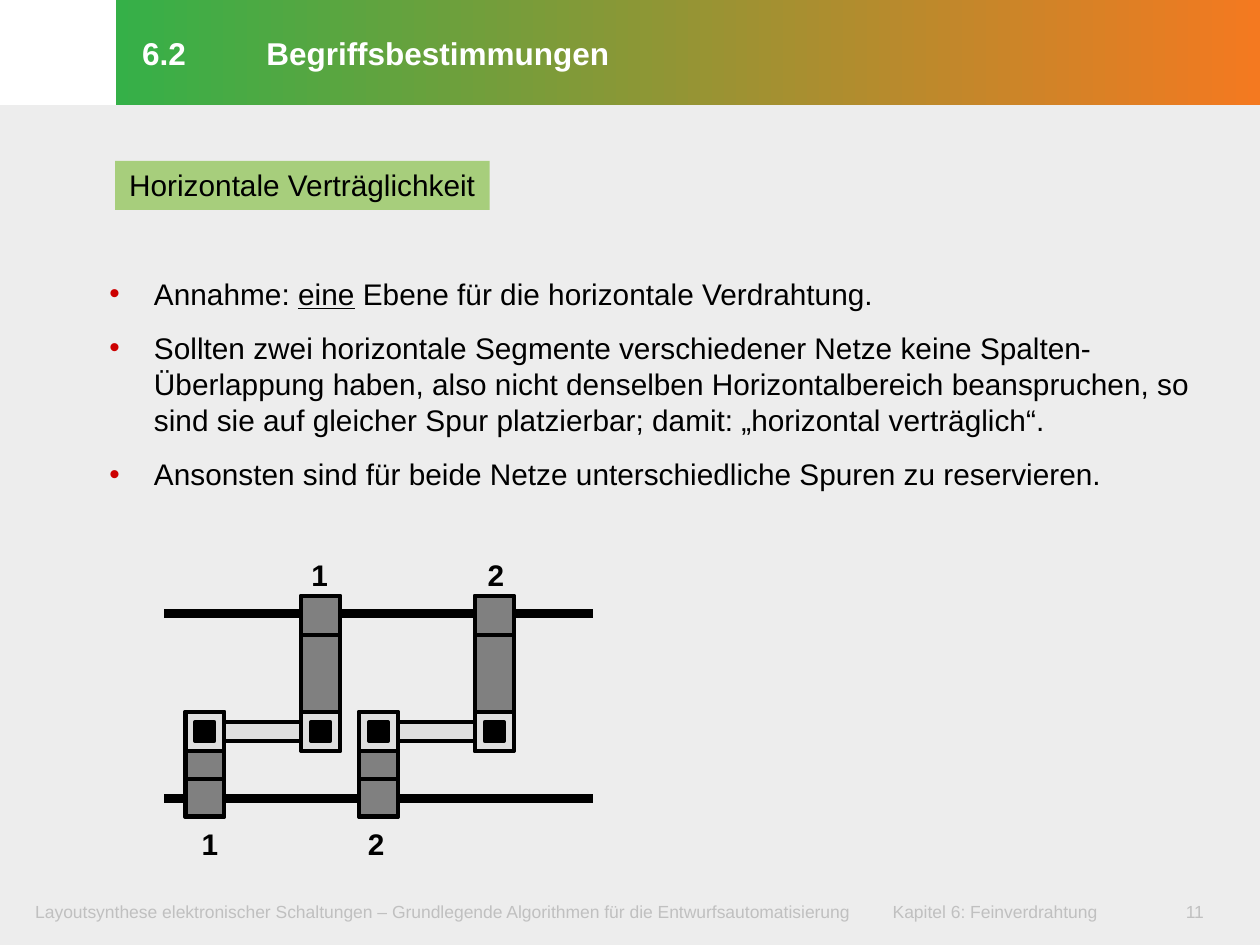
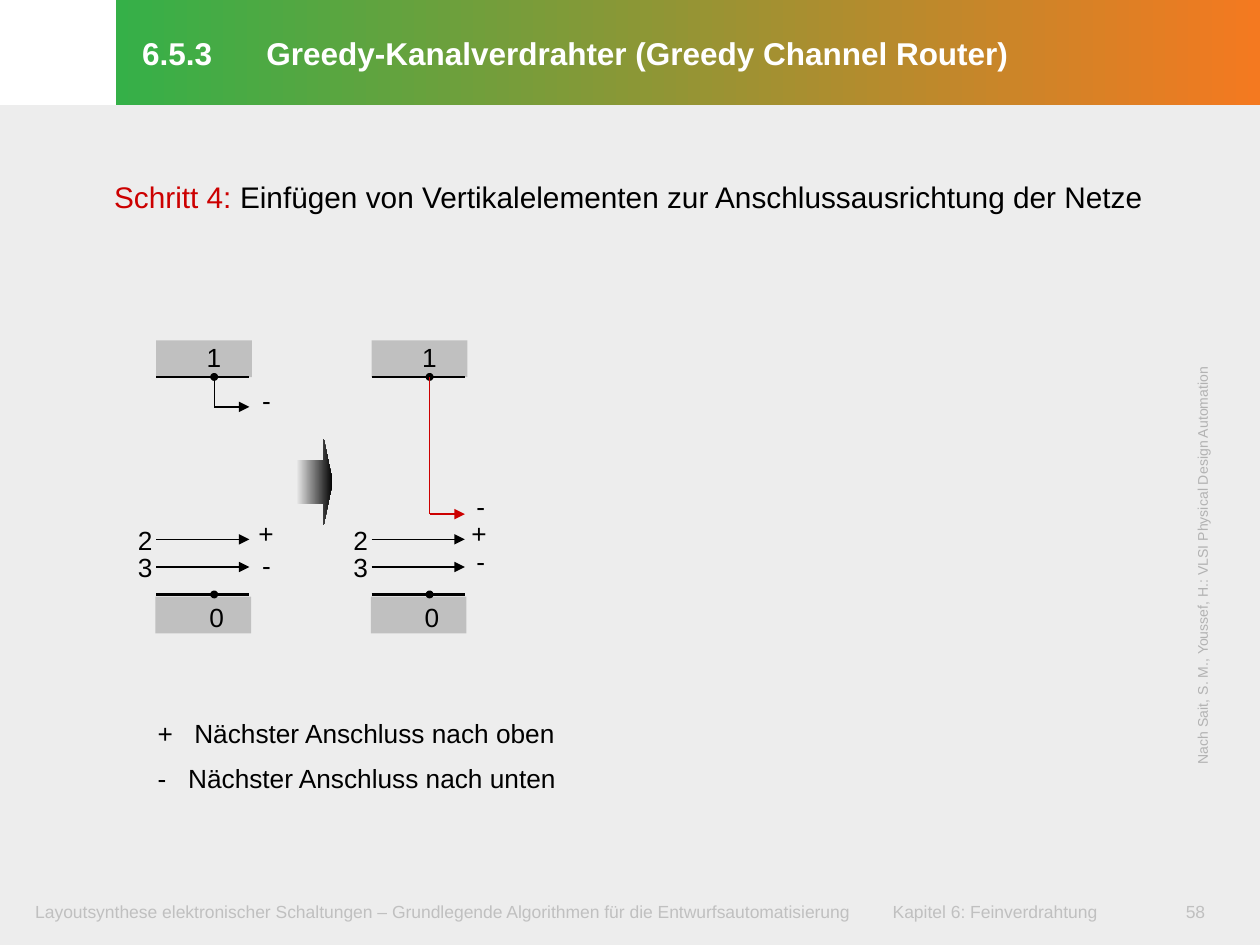
"""Build two slides on detailed routing: horizontal compatibility and the greedy channel router."""

from dataclasses import dataclass

import lxml.etree
import pptx
import pptx.dml.color
import pptx.enum.shapes
import pptx.enum.text
import pptx.oxml.ns
import pptx.presentation
import pptx.shapes.autoshape
import pptx.slide
import pptx.text.text
import pptx.util

Pt = pptx.util.Pt
RGBColor = pptx.dml.color.RGBColor
SHAPE = pptx.enum.shapes.MSO_SHAPE
qn = pptx.oxml.ns.qn

FONT = "Arial"
BLACK = RGBColor(0x00, 0x00, 0x00)
WHITE = RGBColor(0xFF, 0xFF, 0xFF)
RED = RGBColor(0xCC, 0x00, 0x00)
GREEN = RGBColor(0x35, 0xB0, 0x48)
ORANGE = RGBColor(0xF4, 0x79, 0x20)
LIGHT_GREEN = RGBColor(0xA7, 0xCE, 0x7C)
PANEL = RGBColor(0xED, 0xED, 0xED)
SILVER = RGBColor(0xC0, 0xC0, 0xC0)
CITATION = RGBColor(0xB2, 0xB2, 0xB2)
COLUMN_GRAY = RGBColor(0x80, 0x80, 0x80)
TRACK_GRAY = RGBColor(0xDF, 0xDF, 0xDF)
ARROW_GRAY = RGBColor(0xEA, 0xEA, 0xEA)

FOOTER = (
    "Layoutsynthese elektronischer Schaltungen – Grundlegende Algorithmen "
    "für die Entwurfsautomatisierung\tKapitel 6: Feinverdrahtung"
)
BULLETS = [
    ["Annahme: ", "eine", " Ebene für die horizontale Verdrahtung."],
    [
        "Sollten zwei horizontale Segmente verschiedener Netze keine Spalten-Überlappung haben, "
        "also nicht denselben Horizontalbereich beanspruchen, so sind sie auf gleicher Spur "
        "platzierbar; damit: „horizontal verträglich“."
    ],
    ["Ansonsten sind für beide Netze unterschiedliche Spuren zu reservieren."],
]


@dataclass(frozen=True)
class Box:
    """Place and size of a shape in points."""

    left: float
    top: float
    width: float
    height: float


@dataclass(frozen=True)
class Style:
    """Look of a text box: size, colour and inner margins in points."""

    size: float
    color: RGBColor = BLACK
    bold: bool = False
    left: float = 8
    top: float = 3.6
    bottom: float = 3.6
    spacing: float | None = None


@dataclass(frozen=True)
class Net:
    """One routed net with the places of its two pin labels."""

    label: str
    left: float
    top_label: float
    bottom_label: float


@dataclass(frozen=True)
class Stage:
    """State of the channel, with the depth of the bend and the place of the signs."""

    left: float
    bend: float
    color: RGBColor
    signs: tuple[tuple[str, float, float], ...]


TITLE = Style(18, WHITE, bold=True, left=15, bottom=5, spacing=23.5)
FOOTNOTE = Style(10, SILVER, left=8.6, top=4.3)
TAG = Style(17)
STEP = Style(17, left=15, bottom=5, spacing=23.5)
PIN_LABEL = Style(17, bold=True)
LABEL = Style(15)
SOURCE = Style(8, CITATION, left=7.2)

NETS = [Net("1", 105.9, 170, 107.3), Net("2", 205.2, 270.7, 202.3)]
COLUMN_STEP = 66.2
PIN = 22.2
TOP_PIN, VIA, BOTTOM_PIN = 340.6, 406.9, 445
BOTTOM_END = 466.6
CORE = 10.8
CORE_INSET = (PIN - CORE) / 2
RAILS = (350.7, 456.2)

TOP_EDGE, BOTTOM_EDGE = 215.4, 339.7
TRACKS = {"2": 308.2, "3": 324}
TRACK_LENGTH = 53.2
PIN_OFFSET = 33.1
STAGES = [
    Stage(89.3, 232.5, BLACK, (("-", 52.5, 216), ("+", 50.4, 292.3), ("-", 52.5, 310.3))),
    Stage(212.4, 293.8, RED, (("-", 51.8, 276.5), ("+", 49, 292.3), ("-", 51.8, 308.2))),
]


def add_box(
    slide: pptx.slide.Slide,
    box: Box,
    fill: RGBColor | tuple[RGBColor, RGBColor] | None,
    kind: SHAPE = SHAPE.RECTANGLE,
    line: float = 0,
) -> pptx.shapes.autoshape.Shape:
    """Draw a preset shape with a plain or two-colour fill and an optional black line."""
    shape = slide.shapes.add_shape(kind, Pt(box.left), Pt(box.top), Pt(box.width), Pt(box.height))
    shape.shadow.inherit = False
    if fill is None:
        shape.fill.background()
    elif isinstance(fill, RGBColor):
        shape.fill.solid()
        shape.fill.fore_color.rgb = fill
    else:
        shape.fill.gradient()
        shape.fill.gradient_angle = 0
        for stop, color in zip(shape.fill.gradient_stops, fill):
            stop.color.rgb = color
    if line:
        shape.line.color.rgb = BLACK
        shape.line.width = Pt(line)
    else:
        shape.line.fill.background()
    return shape


def add_tab(paragraph: pptx.text.text._Paragraph, position: float) -> None:
    """Set one left tab stop."""
    tabs = lxml.etree.SubElement(paragraph._p.get_or_add_pPr(), qn("a:tabLst"))
    lxml.etree.SubElement(tabs, qn("a:tab"), pos=str(Pt(position)), algn="l")


def add_bullet(paragraph: pptx.text.text._Paragraph, indent: float) -> None:
    """Give a paragraph a red bullet and a hanging indent."""
    properties = paragraph._p.get_or_add_pPr()
    properties.set("marL", str(Pt(indent)))
    properties.set("indent", str(-Pt(indent)))
    color = lxml.etree.SubElement(properties, qn("a:buClr"))
    lxml.etree.SubElement(color, qn("a:srgbClr"), val=str(RED))
    lxml.etree.SubElement(properties, qn("a:buFont"), typeface=FONT)
    lxml.etree.SubElement(properties, qn("a:buChar"), char="•")


def write_paragraph(
    paragraph: pptx.text.text._Paragraph, pieces: list[str], style: Style
) -> None:
    """Write the pieces as runs of one paragraph."""
    paragraph.text = pieces[0]
    for piece in pieces[1:]:
        paragraph.add_run().text = piece
    paragraph.alignment = pptx.enum.text.PP_ALIGN.LEFT
    if style.spacing:
        paragraph.line_spacing = Pt(style.spacing)
    for run in paragraph.runs:
        run.font.name = FONT
        run.font.size = Pt(style.size)
        run.font.bold = style.bold
        run.font.color.rgb = style.color


def prepare_frame(
    shape: pptx.shapes.autoshape.Shape, style: Style, middle: bool = False
) -> pptx.text.text.TextFrame:
    """Set margins, wrapping and anchor of a text frame."""
    frame = shape.text_frame
    frame.word_wrap = True
    frame.margin_left, frame.margin_right = Pt(style.left), Pt(0)
    frame.margin_top, frame.margin_bottom = Pt(style.top), Pt(style.bottom)
    anchor = pptx.enum.text.MSO_ANCHOR
    frame.vertical_anchor = anchor.MIDDLE if middle else anchor.TOP
    return frame


def add_text(
    slide: pptx.slide.Slide, box: Box, pieces: list[str], style: Style, tab: float = 0
) -> pptx.shapes.autoshape.Shape:
    """Add a text box of one paragraph."""
    shape = slide.shapes.add_textbox(Pt(box.left), Pt(box.top), Pt(box.width), Pt(box.height))
    paragraph = prepare_frame(shape, style).paragraphs[0]
    if tab:
        add_tab(paragraph, tab)
    write_paragraph(paragraph, pieces, style)
    return shape


def add_line(
    slide: pptx.slide.Slide,
    start: tuple[float, float],
    end: tuple[float, float],
    width: float,
    color: RGBColor = BLACK,
    arrow: bool = False,
) -> None:
    """Draw a straight line, with an arrowhead at its end if asked."""
    connector = slide.shapes.add_connector(
        pptx.enum.shapes.MSO_CONNECTOR.STRAIGHT, *(Pt(value) for value in (*start, *end))
    )
    connector.line.color.rgb = color
    connector.line.width = Pt(width)
    if arrow:
        lxml.etree.SubElement(connector.line._get_or_add_ln(), qn("a:tailEnd"), type="triangle")
    lxml.etree.SubElement(connector._element.spPr, qn("a:effectLst"))


def add_base_slide(
    presentation: pptx.presentation.Presentation, number: str, title: str, page: str
) -> pptx.slide.Slide:
    """Add a slide with the panel, the footer and the title band."""
    slide = presentation.slides.add_slide(presentation.slide_layouts[6])
    add_box(slide, Box(0, 60, 720, 480), PANEL)
    add_text(slide, Box(11.5, 510.5, 660, 23), [FOOTER], FOOTNOTE, tab=490)
    add_text(slide, Box(669, 510.5, 42.5, 23), [page], FOOTNOTE)
    band = add_box(slide, Box(66.2, 0, 653.8, 60), (GREEN, ORANGE))
    paragraph = prepare_frame(band, TITLE, middle=True).paragraphs[0]
    add_tab(paragraph, 71)
    write_paragraph(paragraph, [f"{number}\t{title}"], TITLE)
    return slide


def draw_net(slide: pptx.slide.Slide, net: Net) -> None:
    """Draw the two columns, pins, vias and the track of a net."""
    right = net.left + COLUMN_STEP
    add_box(slide, Box(right, TOP_PIN, PIN, VIA + PIN - TOP_PIN), COLUMN_GRAY, line=2.5)
    add_box(slide, Box(net.left, VIA, PIN, BOTTOM_END - VIA), COLUMN_GRAY, line=2.5)
    add_box(slide, Box(right, TOP_PIN, PIN, PIN), None, line=2.5)
    add_box(slide, Box(net.left, BOTTOM_PIN, PIN, BOTTOM_END - BOTTOM_PIN), None, line=2.5)
    core_top = VIA + CORE_INSET
    for left in (net.left, right):
        add_box(slide, Box(left, VIA, PIN, PIN), TRACK_GRAY, line=2.5)
        add_box(slide, Box(left + CORE_INSET, core_top, CORE, CORE), BLACK, line=2.5)
    add_box(slide, Box(net.left + PIN, core_top, COLUMN_STEP - PIN, CORE), TRACK_GRAY, line=2.5)
    for left, top in ((net.top_label, 314.6), (net.bottom_label, 468.4)):
        add_text(slide, Box(left, top, 24.5, 28), [net.label], PIN_LABEL)


def draw_stage(slide: pptx.slide.Slide, stage: Stage) -> None:
    """Draw one state of the channel with pins, tracks and signs."""
    left, end, pin = stage.left, stage.left + TRACK_LENGTH, stage.left + PIN_OFFSET
    add_box(slide, Box(left, 194.5, 54.7, 21), SILVER)
    add_box(slide, Box(left - 0.5, 340.9, 54.7, 21), SILVER)
    for edge in (TOP_EDGE, BOTTOM_EDGE):
        add_line(slide, (left, edge), (end, edge), 1.5)
        add_box(slide, Box(pin - 1.5, edge - 1.5, 3, 3), BLACK, SHAPE.OVAL, 1.5)
    add_line(slide, (pin, stage.bend), (pin, TOP_EDGE), 0.75, stage.color)
    add_line(slide, (pin, stage.bend), (end, stage.bend), 0.75, stage.color, arrow=True)
    for label, height in TRACKS.items():
        add_line(slide, (left, height), (end, height), 0.75, arrow=True)
        add_text(slide, Box(left - 18.5, height - 12.3, 21, 25), [label], LABEL)
    add_text(slide, Box(left + 20.8, 191.5, 21, 25), ["1"], LABEL)
    add_text(slide, Box(left + 22.3, 339.8, 21, 25), ["0"], LABEL)
    for sign, offset, top in stage.signs:
        add_text(slide, Box(left + offset, top, 23.8, 25), [sign], LABEL)


def build_compatibility(presentation: pptx.presentation.Presentation) -> None:
    """Build the slide on horizontal compatibility."""
    slide = add_base_slide(presentation, "6.2", "Begriffsbestimmungen", "11")
    tag = add_box(slide, Box(65.8, 92, 214, 28), LIGHT_GREEN)
    write_paragraph(prepare_frame(tag, TAG).paragraphs[0], ["Horizontale Verträglichkeit"], TAG)
    body = slide.shapes.add_textbox(Pt(47.5), Pt(153.4), Pt(637.8), Pt(345))
    frame = prepare_frame(body, STEP)
    for index, pieces in enumerate(BULLETS):
        paragraph = frame.add_paragraph() if index else frame.paragraphs[0]
        add_bullet(paragraph, 25.5)
        write_paragraph(paragraph, pieces, TAG)
        paragraph.line_spacing = 1.02
        paragraph.space_before = Pt(10 if index else 0)
    frame.paragraphs[0].runs[1].font.underline = True
    for rail in RAILS:
        add_line(slide, (94, rail), (339, rail), 5)
    for net in NETS:
        draw_net(slide, net)


def build_greedy_router(presentation: pptx.presentation.Presentation) -> None:
    """Build the slide on step 4 of the greedy channel router."""
    title = "Greedy-Kanalverdrahter (Greedy Channel Router)"
    slide = add_base_slide(presentation, "6.5.3", title, "58")
    for stage in STAGES:
        draw_stage(slide, stage)
    arrow = add_box(slide, Box(169.5, 250.6, 20.6, 49.5), (ARROW_GRAY, BLACK), SHAPE.RIGHT_ARROW)
    arrow.adjustments[1] = 0.25
    step = "Einfügen von Vertikalelementen zur Anschlussausrichtung der Netze"
    heading = add_text(slide, Box(50.2, 95.8, 613, 32), ["Schritt 4: ", step], STEP)
    heading.text_frame.paragraphs[0].runs[0].font.color.rgb = RED
    citation = "Nach Sait, S. M., Youssef, H.: VLSI Physical Design Automation"
    add_text(slide, Box(559.4, 307.4, 255.6, 17), [citation], SOURCE).rotation = 270
    for sign, direction, top, tab in (("+", "oben", 406.4, 21), ("-", "unten", 432, 17.5)):
        legend = f"{sign}\tNächster Anschluss nach {direction}"
        add_text(slide, Box(82, top, 306, 25), [legend], LABEL, tab)


def main() -> None:
    """Build and save the presentation."""
    presentation = pptx.Presentation()
    presentation.slide_width, presentation.slide_height = Pt(720), Pt(540)
    build_compatibility(presentation)
    build_greedy_router(presentation)
    presentation.save("out.pptx")


if __name__ == "__main__":
    main()
